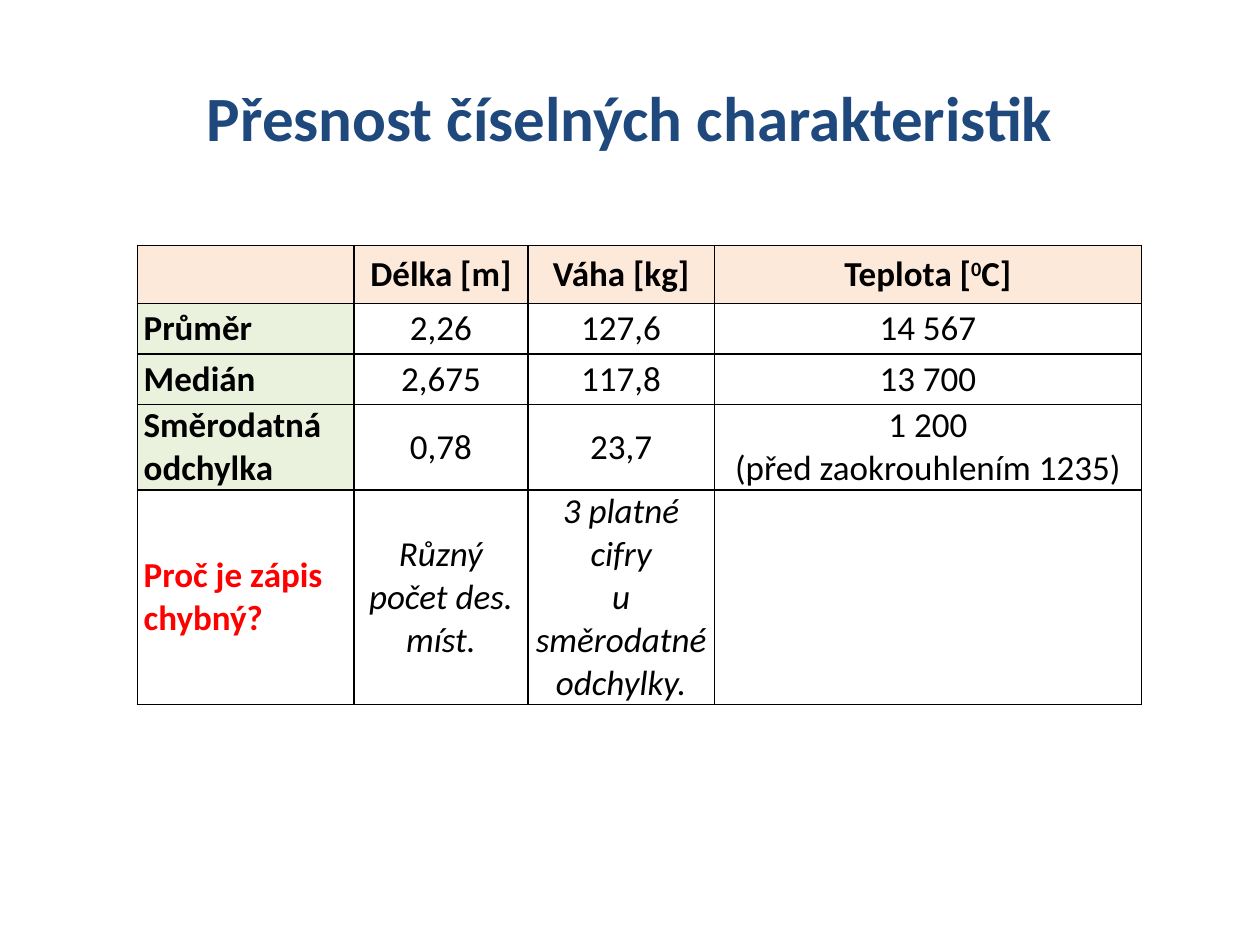
import pptx
import pptx.util
import pptx.dml.color
import pptx.enum.text
import pptx.oxml
import pptx.oxml.ns
from pptx.util import Inches

NAVY = pptx.dml.color.RGBColor(0x1F, 0x49, 0x7D)
BLACK = pptx.dml.color.RGBColor(0, 0, 0)
RED = pptx.dml.color.RGBColor(0xFF, 0, 0)
PEACH = pptx.dml.color.RGBColor(0xFD, 0xE9, 0xD9)
GREEN = pptx.dml.color.RGBColor(0xEA, 0xF1, 0xDD)
ALIGN = pptx.enum.text.PP_ALIGN
MIDDLE = pptx.enum.text.MSO_ANCHOR.MIDDLE

COLUMN_WIDTHS = [1.72, 1.38, 1.48, 3.39]
ROW_HEIGHTS = [0.46, 0.4, 0.4, 0.65, 1.7]
ROWS = [
    ["", "Délka [m]", "Váha [kg]", "Teplota ["],
    ["Průměr", "2,26", "127,6", "14 567"],
    ["Medián", "2,675", "117,8", "13 700"],
    ["Směrodatná odchylka", "0,78", "23,7", "1 200\n(před zaokrouhlením 1235)"],
    ["Proč je zápis chybný?", "Různý počet des. míst.",
     "3 platné cifry\nu směrodatné odchylky.", ""],
]
LAST_ROW = len(ROWS) - 1


def style_font(font, size, color, bold, italic=False):
    font.name = "Calibri"
    font.size = pptx.util.Pt(size)
    font.color.rgb = color
    font.bold = bold
    font.italic = italic


def add_borders(cell):
    properties = cell._tc.get_or_add_tcPr()
    for side in ("lnL", "lnR", "lnT", "lnB"):
        properties.append(pptx.oxml.parse_xml(
            f'<a:{side} {pptx.oxml.ns.nsdecls("a")} w="12700"><a:solidFill>'
            f'<a:srgbClr val="{BLACK}"/></a:solidFill></a:{side}>'))


deck = pptx.Presentation()
deck.slide_width, deck.slide_height = Inches(10), Inches(7.5)
page = deck.slides.add_slide(deck.slide_layouts[5])

# Title
title = page.shapes.title
title.left, title.top = Inches(0.5), Inches(0.3)
title.width, title.height = Inches(9), Inches(1.25)
title.text_frame.text = "Přesnost číselných charakteristik"
title.text_frame.vertical_anchor = MIDDLE
para = title.text_frame.paragraphs[0]
para.alignment = ALIGN.CENTER
style_font(para.runs[0].font, 36, NAVY, True)

# Table grid
table = page.shapes.add_table(
    len(ROWS), len(COLUMN_WIDTHS), Inches(1.09), Inches(1.95),
    Inches(sum(COLUMN_WIDTHS)), Inches(sum(ROW_HEIGHTS))).table
table.first_row = table.horz_banding = False
for column, width in zip(table.columns, COLUMN_WIDTHS):
    column.width = Inches(width)
for row, height in zip(table.rows, ROW_HEIGHTS):
    row.height = Inches(height)

# Cell wording
for r, texts in enumerate(ROWS):
    for c, text in enumerate(texts):
        table.cell(r, c).text_frame.text = text
heading = table.cell(0, 3).text_frame.paragraphs[0]
degree = heading.add_run()
degree.text = "0"
degree.font._element.set("baseline", "30000")
heading.add_run().text = "C]"

# Cell formatting
for r in range(len(ROWS)):
    for c in range(len(COLUMN_WIDTHS)):
        cell = table.cell(r, c)
        cell.vertical_anchor = MIDDLE
        cell.margin_left = cell.margin_right = Inches(0.05)
        cell.margin_top = cell.margin_bottom = 0
        add_borders(cell)
        if r == 0 or (c == 0 and r < LAST_ROW):
            cell.fill.solid()
            cell.fill.fore_color.rgb = PEACH if r == 0 else GREEN
        else:
            cell.fill.background()
        color = RED if r == LAST_ROW and c == 0 else BLACK
        for para in cell.text_frame.paragraphs:
            para.alignment = ALIGN.LEFT if c == 0 else ALIGN.CENTER
            for span in para.runs:
                style_font(span.font, 20, color, r == 0 or c == 0,
                           r == LAST_ROW and c > 0)

deck.save("out.pptx")
